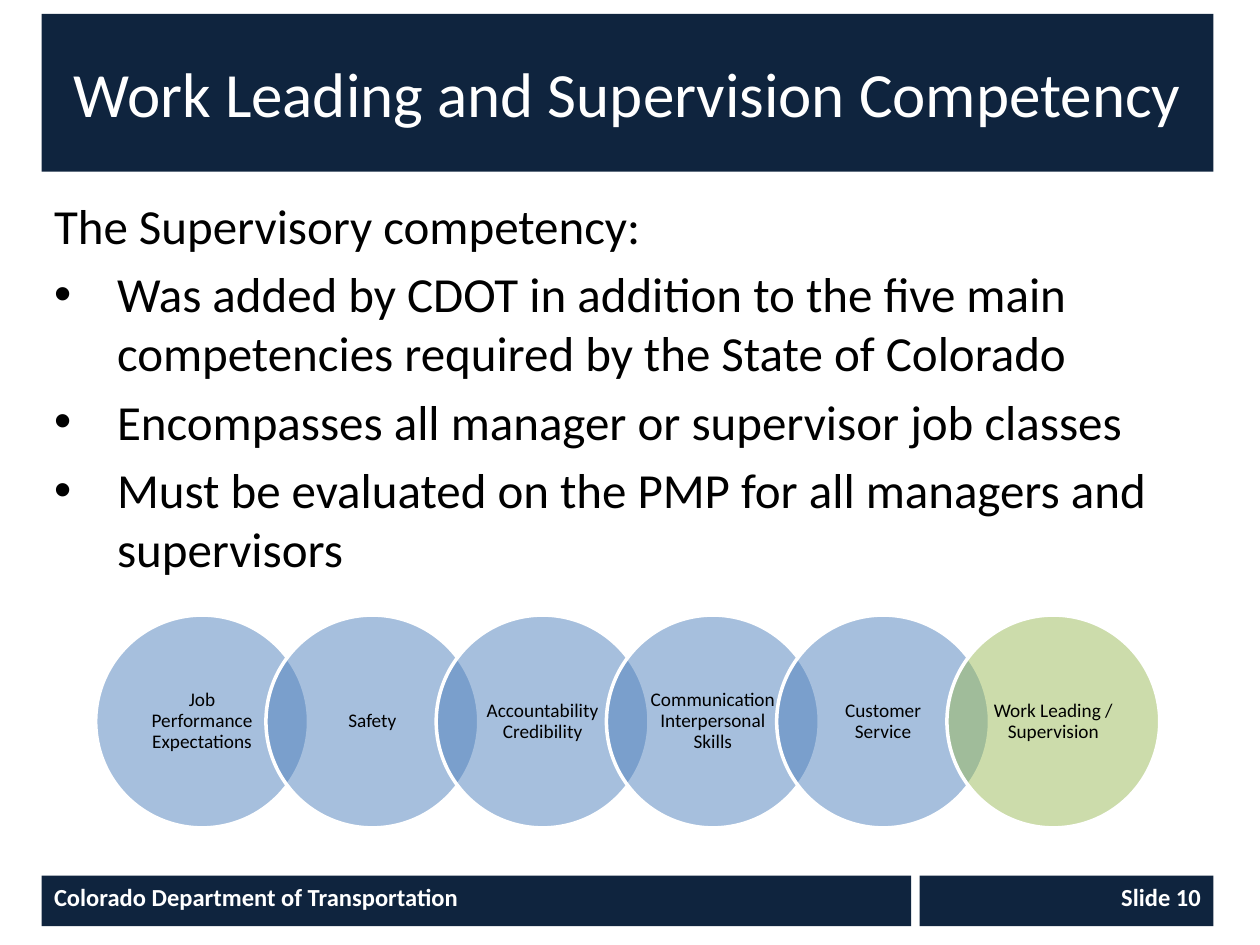
"""Build the slide on the work leading and supervision competency."""
from lxml import etree
from pptx import Presentation
from pptx.dml.color import RGBColor
from pptx.enum.shapes import MSO_SHAPE
from pptx.enum.text import MSO_ANCHOR, PP_ALIGN
from pptx.oxml.ns import qn
from pptx.util import Cm, Pt

NAVY = RGBColor(0x0F, 0x24, 0x3E)
BLUE = RGBColor(0x4F, 0x81, 0xBD)
GREEN = RGBColor(0x9B, 0xBB, 0x59)
WHITE = RGBColor(0xFF, 0xFF, 0xFF)
BLACK = RGBColor(0x00, 0x00, 0x00)
RECTANGLE, OVAL = MSO_SHAPE.RECTANGLE, MSO_SHAPE.OVAL
LEFT, CENTER, RIGHT = PP_ALIGN.LEFT, PP_ALIGN.CENTER, PP_ALIGN.RIGHT
TOP, MIDDLE = MSO_ANCHOR.TOP, MSO_ANCHOR.MIDDLE

MARGIN = 0.84
WIDTH = 23.62
BAR_TOP = 17.65
BAR_HEIGHT = 1.02
DIAMETER = 4.29
STEP = DIAMETER * 0.8
CIRCLE_LEFT = 1.93
CIRCLE_TOP = 12.4
LABEL_SIZE = 3.04
LABEL_OFFSET = (DIAMETER - LABEL_SIZE) / 2

BULLETS = [
    "Was added by CDOT in addition to the five main competencies required by the State of Colorado",
    "Encompasses all manager or supervisor job classes",
    "Must be evaluated on the PMP for all managers and supervisors",
]
COMPETENCIES = [
    ("Job Performance Expectations", BLUE),
    ("Safety", BLUE),
    ("Accountability Credibility", BLUE),
    ("Communication Interpersonal Skills", BLUE),
    ("Customer Service", BLUE),
    ("Work Leading / Supervision", GREEN),
]


def apply(target, values):
    """Set each named attribute of the target."""
    for name, value in values.items():
        setattr(target, name, value)


class SlideBuilder:
    """Hold the style and the current slide."""

    font = "Calibri"

    def __init__(self, deck):
        """Start a title-only slide."""
        self.page = deck.slides.add_slide(deck.slide_layouts[5])

    def add_text(self, para, text, size, color, bold=False, **layout):
        """Put styled text in a paragraph."""
        span = para.add_run()
        span.text = text
        apply(span.font, {"name": self.font, "size": Pt(size), "bold": bold})
        span.font.color.rgb = color
        apply(para, layout)

    def title(self, text, *area):
        """Place and fill the title."""
        box = self.page.shapes.title
        apply(box, dict(zip(("left", "top", "width", "height"), map(Cm, area))))
        box.fill.solid()
        box.fill.fore_color.rgb = NAVY
        box.text_frame.vertical_anchor = MIDDLE
        self.add_text(box.text_frame.paragraphs[0], text, 36, WHITE, alignment=CENTER)

    def shape(self, kind, color, *area):
        """Add a plain filled shape."""
        box = self.page.shapes.add_shape(kind, *map(Cm, area))
        box.shadow.inherit = False
        box.fill.solid()
        box.fill.fore_color.rgb = color
        box.line.fill.background()
        return box

    def bar(self, text, alignment, left, width):
        """Add a footer bar."""
        box = self.shape(RECTANGLE, NAVY, left, BAR_TOP, width, BAR_HEIGHT)
        box.text_frame.vertical_anchor = TOP
        self.add_text(box.text_frame.paragraphs[0], text, 14, WHITE, True, alignment=alignment)

    def circle(self, color, left):
        """Add a half-transparent circle with a white outline."""
        box = self.shape(OVAL, color, left, CIRCLE_TOP, DIAMETER, DIAMETER)
        box.line.color.rgb = WHITE
        box.line.width = Pt(2)
        tint = box.element.spPr.find(qn("a:solidFill"))[0]
        etree.SubElement(tint, qn("a:alpha"), val="50000")

    def text_box(self, *area, **frame_format):
        """Add a wrapping text box and return its frame."""
        frame = self.page.shapes.add_textbox(*map(Cm, area)).text_frame
        apply(frame, {"word_wrap": True, **frame_format})
        return frame

    def label(self, text, left):
        """Add a centred circle label."""
        frame = self.text_box(
            left + LABEL_OFFSET, CIRCLE_TOP + LABEL_OFFSET, LABEL_SIZE, LABEL_SIZE,
            vertical_anchor=MIDDLE, margin_left=Cm(0.23), margin_right=Cm(0.23),
            margin_top=Cm(0.05), margin_bottom=Cm(0.05))
        self.add_text(frame.paragraphs[0], text, 11, BLACK, alignment=CENTER, line_spacing=0.9)

    def body(self, lead, bullets, *area):
        """Add a lead line followed by bullets."""
        frame = self.text_box(*area)
        layout = {"alignment": LEFT, "space_before": Pt(5.6)}
        self.add_text(frame.paragraphs[0], lead, 28, BLACK, **layout)
        for text in bullets:
            para = frame.add_paragraph()
            self.add_text(para, text, 28, BLACK, **layout)
            properties = para._p.get_or_add_pPr()
            properties.set("marL", str(Cm(1.27)))
            properties.set("indent", str(-Cm(1.27)))
            etree.SubElement(properties, qn("a:buFont"), typeface="Arial")
            etree.SubElement(properties, qn("a:buChar"), char="•")


def main():
    """Create and save the deck."""
    deck = Presentation()
    apply(deck, {"slide_width": Cm(25.4), "slide_height": Cm(19.05)})
    slide = SlideBuilder(deck)
    slide.title("Work Leading and Supervision Competency", MARGIN, 0.28, WIDTH, 3.18)
    slide.body("The Supervisory competency:", BULLETS, MARGIN, 3.81, WIDTH, 13.72)
    slide.bar("Slide 10", RIGHT, 18.54, 5.92)
    slide.bar("Colorado Department of Transportation", LEFT, MARGIN, 17.53)
    for index, (name, color) in enumerate(COMPETENCIES):
        left = CIRCLE_LEFT + index * STEP
        slide.circle(color, left)
        slide.label(name, left)
    deck.save("out.pptx")


if __name__ == "__main__":
    main()
